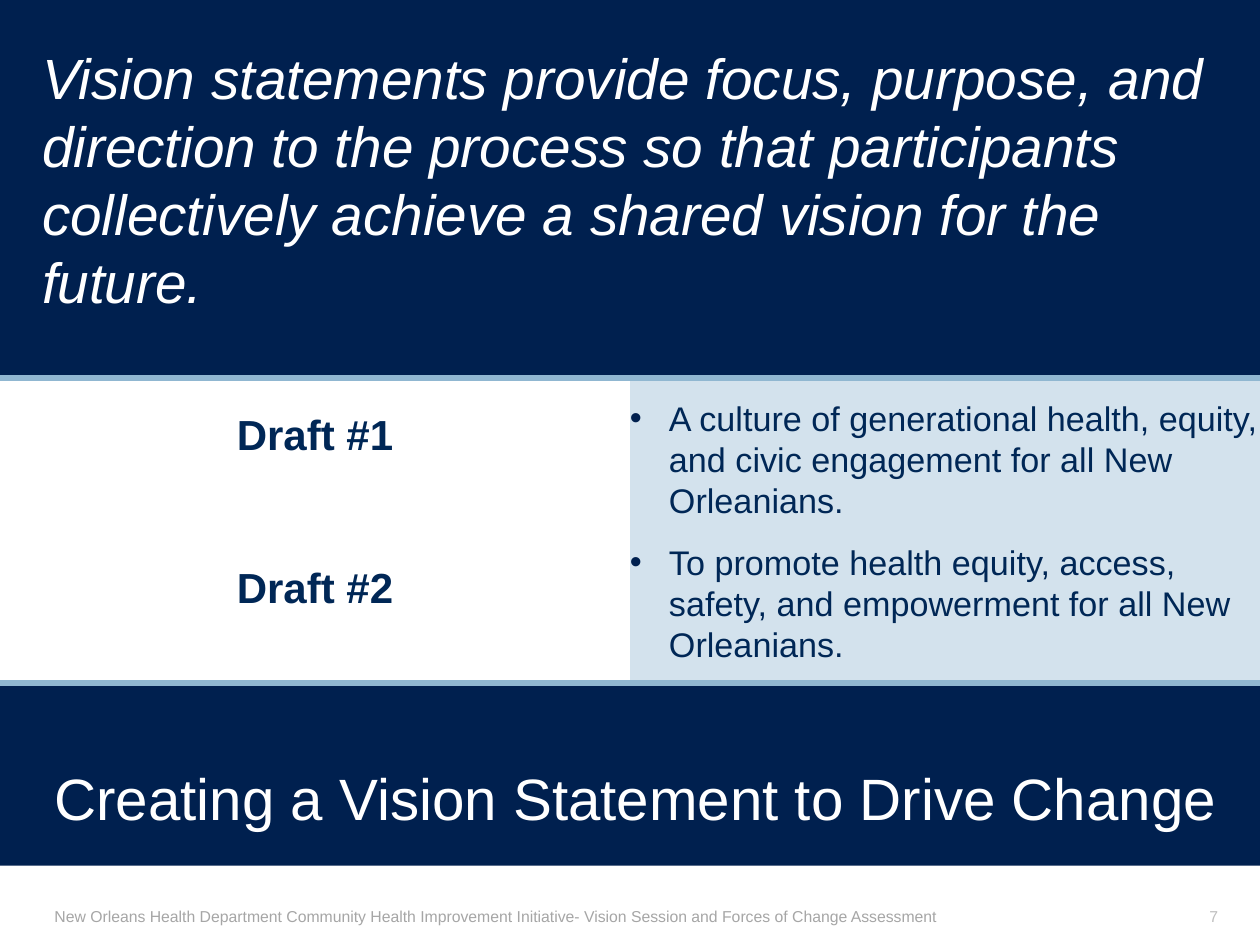
"""Builds the vision statement slide with two drafts between navy bands."""
from dataclasses import dataclass

from lxml.etree import SubElement
from pptx import Presentation
from pptx.dml.color import RGBColor
from pptx.enum.shapes import MSO_CONNECTOR, MSO_SHAPE
from pptx.enum.text import MSO_ANCHOR as Anchor, PP_ALIGN as Align
from pptx.oxml.ns import qn
from pptx.util import Inches, Pt

PURPOSE = ("Vision statements provide focus, purpose, and direction to the process so that "
           "participants collectively achieve a shared vision for the future.")
HEADLINE = "Creating a Vision Statement to Drive Change"
DRAFTS = [
    ("Draft #1", "A culture of generational health, equity, and civic engagement for all New Orleanians."),
    ("Draft #2", "To promote health equity, access, safety, and empowerment for all New Orleanians."),
]
FOOTER = ("New Orleans Health Department Community Health Improvement Initiative- "
          "Vision Session and Forces of Change Assessment")
PAGE = "7"


@dataclass(frozen=True)
class Theme:
    font: str = "Arial"
    navy: str = "00204F"
    ink: str = "002756"
    white: str = "FFFFFF"
    pale: str = "D3E2ED"
    rule: str = "90B7D1"
    footer: str = "A6A6A6"
    page: str = "BFBFBF"
    purpose_size: float = 32.4
    headline_size: float = 33.3
    label_size: float = 24
    draft_size: float = 19.5
    small_size: float = 9


THEME = Theme()
WIDTH, HEIGHT = 10, 7.5
HALF = WIDTH / 2
MARGIN = WIDTH / 30
INNER = WIDTH - 2 * MARGIN
BAND_TOP, BAND_HEIGHT = 3, 2.42
NAVY_HEIGHT = 6.87
INDENT = 0.31


def add_panel(slide, color, left, top, width, height):
    panel = slide.shapes.add_shape(MSO_SHAPE.RECTANGLE, *map(Inches, (left, top, width, height)))
    panel.shadow.inherit = False
    panel.fill.solid()
    panel.fill.fore_color.rgb = RGBColor.from_string(color)
    panel.line.fill.background()
    return panel


def add_box(slide, left, top, width, height):
    return slide.shapes.add_textbox(*map(Inches, (left, top, width, height)))


def write(shape, texts, size, color, align=Align.LEFT, anchor=Anchor.MIDDLE,
          inset=(0, 0), bold=False, italic=False, bullet=False, before=0, after=0):
    frame = shape.text_frame
    frame.word_wrap = True
    frame.vertical_anchor = anchor
    frame.margin_left = frame.margin_right = Inches(inset[0])
    frame.margin_top = frame.margin_bottom = Inches(inset[1])
    frame.text = "\n".join(texts)
    for order, paragraph in enumerate(frame.paragraphs):
        paragraph.alignment = align
        paragraph.space_before = Pt(before if order else 0)
        paragraph.space_after = Pt(after)
        if bullet:
            add_bullet(paragraph)
        font = paragraph.font
        font.name, font.size = THEME.font, Pt(size)
        font.bold, font.italic = bold, italic
        font.color.rgb = RGBColor.from_string(color)


def add_bullet(paragraph):
    properties = paragraph._p.get_or_add_pPr()
    properties.set("marL", str(Inches(INDENT)))
    properties.set("indent", str(-Inches(INDENT)))
    SubElement(SubElement(properties, qn("a:buClr")), qn("a:srgbClr"), val=THEME.navy)
    SubElement(properties, qn("a:buFont"), typeface=THEME.font)
    SubElement(properties, qn("a:buChar"), char="•")


def add_rule(slide, top):
    rule = slide.shapes.add_connector(
        MSO_CONNECTOR.STRAIGHT, *map(Inches, (WIDTH, top, 0, top)))
    rule.line.color.rgb = RGBColor.from_string(THEME.rule)
    rule.line.width = Pt(3)
    SubElement(rule._element.spPr, qn("a:effectLst"))


def main():
    deck = Presentation()
    deck.slide_width, deck.slide_height = Inches(WIDTH), Inches(HEIGHT)
    slide = deck.slides.add_slide(deck.slide_layouts[5])
    labels, statements = zip(*DRAFTS)

    purpose = slide.shapes.title
    purpose.left, purpose.top, purpose.width, purpose.height = map(Inches, (MARGIN, 0.42, INNER, 2))
    write(purpose, [PURPOSE], THEME.purpose_size, THEME.white, italic=True)

    backdrop = add_panel(slide, THEME.navy, 0, 0, WIDTH, NAVY_HEIGHT)
    purpose._element.addprevious(backdrop._element)

    add_panel(slide, THEME.pale, HALF, BAND_TOP, HALF, BAND_HEIGHT)
    label_panel = add_panel(slide, THEME.white, 0, BAND_TOP, HALF, BAND_HEIGHT)
    write(label_panel, labels, THEME.label_size, THEME.ink, Align.CENTER, Anchor.TOP,
          inset=(0.1, 0.24), bold=True, before=59)
    write(add_box(slide, HALF, BAND_TOP, HALF, BAND_HEIGHT), statements,
          THEME.draft_size, THEME.ink, bullet=True, after=12)
    for top in (BAND_TOP, BAND_TOP + BAND_HEIGHT):
        add_rule(slide, top)

    write(add_box(slide, MARGIN, 5.83, INNER, 1), [HEADLINE],
          THEME.headline_size, THEME.white, Align.RIGHT)
    write(add_box(slide, MARGIN, 7.15, 8.75, 0.27), [FOOTER],
          THEME.small_size, THEME.footer, anchor=Anchor.TOP, inset=(0.1, 0.05))
    write(add_box(slide, 7.5, 7.08, WIDTH - MARGIN - 7.5, 0.27), [PAGE],
          THEME.small_size, THEME.page, Align.RIGHT, Anchor.BOTTOM)
    deck.save("out.pptx")


if __name__ == "__main__":
    main()
